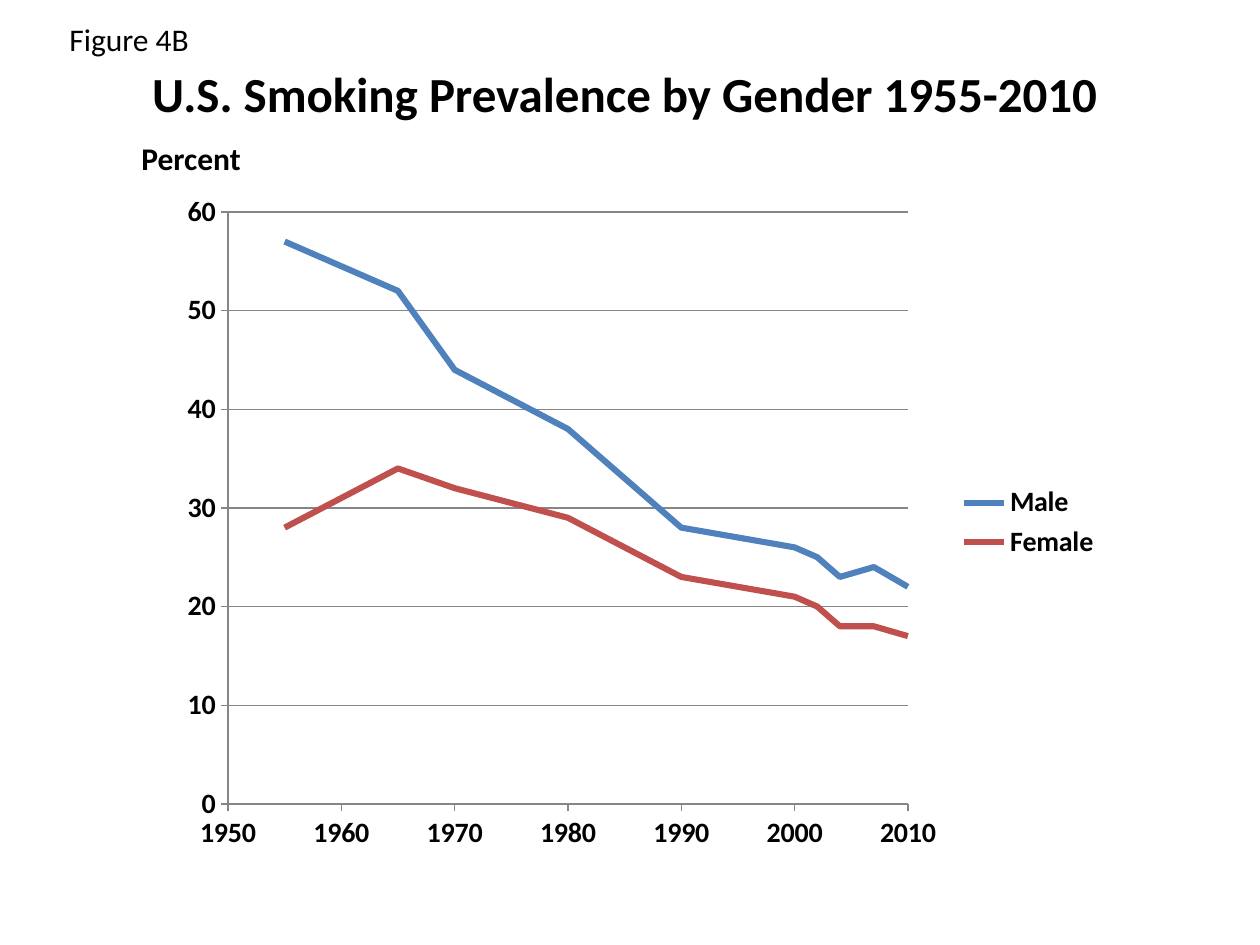
"""Builds a slide with a scatter chart of smoking prevalence by gender."""
from lxml.etree import SubElement
from pptx import Presentation
from pptx.chart.data import XyChartData
from pptx.dml.color import RGBColor
from pptx.enum.chart import XL_CHART_TYPE, XL_LEGEND_POSITION, XL_TICK_MARK
from pptx.enum.text import MSO_ANCHOR, PP_ALIGN
from pptx.oxml.ns import qn
from pptx.util import Emu, Pt

PX = 914400 // 126
BLACK = RGBColor(0x00, 0x00, 0x00)
GRAY = RGBColor(0x86, 0x86, 0x86)
BLUE = RGBColor(0x4F, 0x81, 0xBD)
RED = RGBColor(0xC0, 0x50, 0x4D)

YEARS = (1955, 1965, 1970, 1980, 1990, 2000, 2002, 2003, 2004, 2007, 2010)
RATES = {
    "Male": (57, 52, 44, 38, 28, 26, 25, 24, 23, 24, 22),
    "Female": (28, 34, 32, 29, 23, 21, 20, 19, 18, 18, 17),
}
COLORS = (BLUE, RED)
CHART_BOX = (168, 181, 945, 683)
PLOT_BOX = (60, 31, 680, 592)


def apply(obj, values):
    for name, value in values.items():
        setattr(obj, name, value)


class SlideBuilder:
    def __init__(self, slide, font="Calibri"):
        self.slide = slide
        self.font = font

    def style(self, font, size, bold=False):
        apply(font, {"name": self.font, "size": Pt(size), "bold": bold})
        font.color.rgb = BLACK

    def text(self, text, box, size, bold=False, align=PP_ALIGN.LEFT, **frame):
        sp = self.slide.shapes.add_textbox(*(Emu(v * PX) for v in box))
        tf = sp.text_frame
        apply(tf, {"word_wrap": True, "vertical_anchor": MSO_ANCHOR.TOP, **frame})
        p = tf.paragraphs[0]
        p.alignment = align
        r = p.add_run()
        r.text = text
        self.style(r.font, size, bold)

    def axis(self, axis, low, high, step, grid):
        apply(axis, {
            "minimum_scale": low, "maximum_scale": high, "major_unit": step,
            "has_major_gridlines": grid, "major_tick_mark": XL_TICK_MARK.OUTSIDE,
            "minor_tick_mark": XL_TICK_MARK.NONE,
        })
        apply(axis.tick_labels, {"number_format": "0", "number_format_is_linked": False})
        self.style(axis.tick_labels.font, 16, True)
        lines = [axis.format.line]
        if grid:
            lines.append(axis.major_gridlines.format.line)
        for line in lines:
            line.color.rgb = GRAY
            line.width = Pt(0.75)

    def plot_layout(self, chart, box, plot_box):
        area = chart.element.chart.plotArea
        layout = area.find(qn("c:layout"))
        if layout is None:
            layout = SubElement(area, qn("c:layout"))
            area.insert(0, layout)
        manual = SubElement(layout, qn("c:manualLayout"))
        settings = {"layoutTarget": "inner", "xMode": "edge", "yMode": "edge"}
        for tag, length, whole in zip("xywh", plot_box, box[2:] * 2):
            settings[tag] = length / whole
        for tag, value in settings.items():
            SubElement(manual, qn(f"c:{tag}")).set("val", str(value))

    def chart(self, box, plot_box):
        data = XyChartData()
        for name, rates in RATES.items():
            series = data.add_series(name)
            for year, rate in zip(YEARS, rates):
                series.add_data_point(year, rate)
        chart = self.slide.shapes.add_chart(
            XL_CHART_TYPE.XY_SCATTER_LINES_NO_MARKERS,
            *(Emu(v * PX) for v in box), data).chart
        apply(chart, {"has_title": False, "has_legend": True})
        self.style(chart.font, 10)
        apply(chart.legend, {"position": XL_LEGEND_POSITION.RIGHT,
                             "include_in_layout": False})
        self.style(chart.legend.font, 16, True)
        self.axis(chart.category_axis, 1950, 2010, 10, False)
        self.axis(chart.value_axis, 0, 60, 10, True)
        chart.plots[0].vary_by_categories = False
        for series, color in zip(chart.plots[0].series, COLORS):
            series.smooth = False
            series.format.line.color.rgb = color
            series.format.line.width = Pt(3.5)
        self.plot_layout(chart, box, plot_box)


def main():
    prs = Presentation()
    apply(prs, {"slide_width": Emu(1260 * PX), "slide_height": Emu(945 * PX)})
    s = SlideBuilder(prs.slides.add_slide(prs.slide_layouts[6]))
    s.text("U.S. Smoking Prevalence by Gender 1955-2010", (94, 64, 1061, 88), 28, True,
           PP_ALIGN.CENTER, margin_left=0, margin_right=0, margin_top=0, margin_bottom=0)
    s.chart(CHART_BOX, PLOT_BOX)
    s.text("Figure 4B", (57, 14, 247, 50), 18)
    s.text("Percent", (129, 133, 161, 50), 18, True)
    prs.save("out.pptx")


if __name__ == "__main__":
    main()
